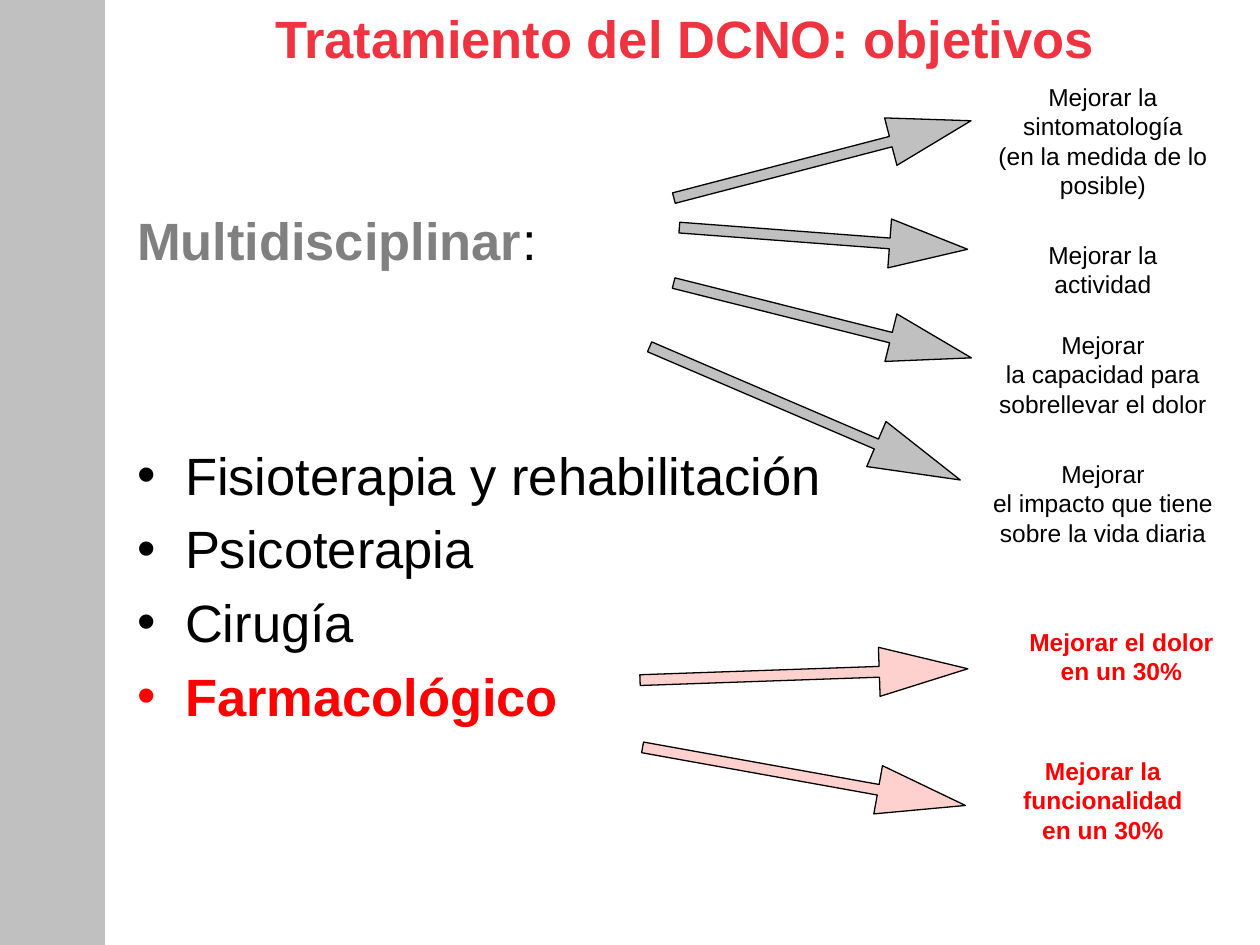
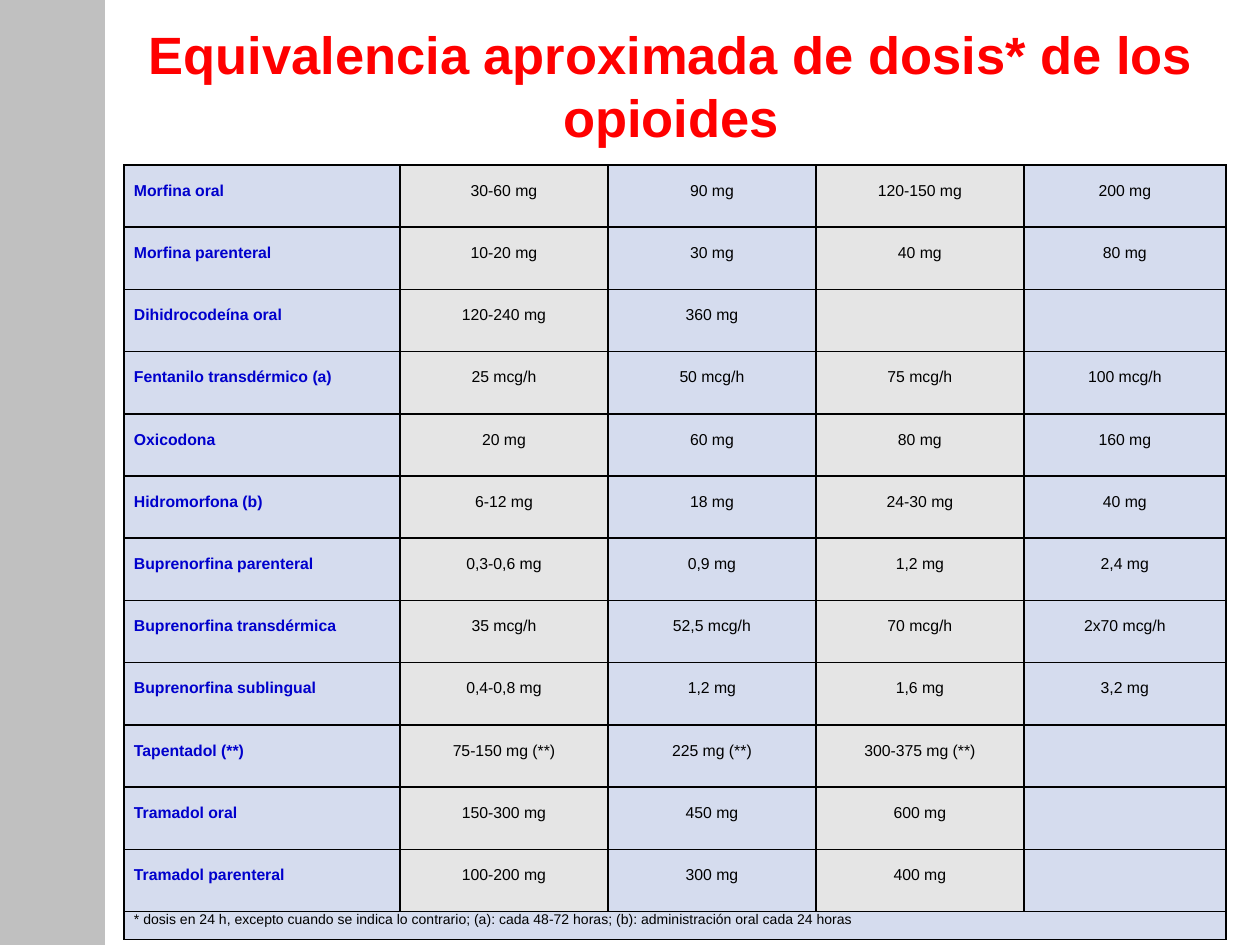
from dataclasses import dataclass

from lxml import etree
from pptx import Presentation
from pptx import util as u
from pptx.dml.color import RGBColor
from pptx.enum import shapes, text
from pptx.oxml.ns import qn

PX = u.Inches(1) // 126


def px(length):
    return u.Emu(length * PX)


@dataclass(frozen=True)
class Theme:
    sans: str = "Arial"
    black: str = "000000"
    gray: str = "808080"
    band: str = "C0C0C0"
    accent: str = "EF3340"
    red: str = "FF0000"
    pink: str = "FED1CE"
    row_label: str = "0000CC"
    cell_blue: str = "D5DCEE"
    heading_size: int = 30
    outcome_size: int = 14
    cell_size: int = 9
    note_size: int = 8


class SlideBuilder:
    def __init__(self, deck, theme):
        self.deck = deck
        self.theme = theme
        self.page = None

    def new_page(self, title, at, color):
        self.page = self.deck.slides.add_slide(self.deck.slide_layouts[5])
        self.shape(shapes.MSO_SHAPE.RECTANGLE, (0, 0, 104, 945),
                   self.theme.band, self.theme.band)
        box = self.page.shapes.title
        box.left, box.top, box.width, box.height = map(px, at)
        self.frame(box)
        para = box.text_frame.paragraphs[0]
        para.alignment = text.PP_ALIGN.CENTER
        self.span(para, title, self.theme.heading_size, color, bold=True)

    def shape(self, kind, at, fill, line):
        shape = self.page.shapes.add_shape(kind, *map(px, at))
        shape.shadow.inherit = False
        shape.fill.solid()
        shape.fill.fore_color.rgb = RGBColor.from_string(fill)
        shape.line.color.rgb = RGBColor.from_string(line)
        shape.line.width = u.Pt(0.75)
        return shape

    def arrow(self, left, top, length, angle, fill):
        """Draw a thin arrow whose head is a fixed share of its length."""
        height = 49
        arrow = self.shape(shapes.MSO_SHAPE.RIGHT_ARROW,
                           (left, top, length, height), fill, self.theme.black)
        arrow.adjustments[0] = 0.22
        arrow.adjustments[1] = 0.27 * length / height
        arrow.rotation = angle

    def frame(self, box, side=13):
        frame = box.text_frame
        frame.word_wrap = True
        frame.auto_size = text.MSO_AUTO_SIZE.NONE
        frame.vertical_anchor = text.MSO_ANCHOR.TOP
        frame.margin_left = frame.margin_right = px(side)
        frame.margin_top = frame.margin_bottom = px(6)

    def text_box(self, at, side=13):
        box = self.page.shapes.add_textbox(*map(px, at))
        self.frame(box, side)
        return box

    def span(self, para, words, size, color, bold=False):
        span = para.add_run()
        span.text = words
        span.font.name = self.theme.sans
        span.font.size = u.Pt(size)
        span.font.bold = bold
        span.font.color.rgb = RGBColor.from_string(color)

    def paragraphs(self, box, count):
        frame = box.text_frame
        return [frame.paragraphs[0]] + [frame.add_paragraph() for _ in range(count - 1)]

    def outcome(self, at, lines, color, bold=False):
        box = self.text_box(at, side=16)
        for para, line in zip(self.paragraphs(box, len(lines)), lines):
            para.alignment = text.PP_ALIGN.CENTER
            self.span(para, line, self.theme.outcome_size, color, bold)

    def bullets(self, at, items):
        """List (words, color, bold) items with hanging bullets."""
        box = self.text_box(at)
        for i, (para, item) in enumerate(zip(self.paragraphs(box, len(items)), items)):
            words, color, bold = item
            props = para._p.get_or_add_pPr()
            props.set("marL", str(px(48)))
            props.set("indent", str(-px(48)))
            etree.SubElement(props, qn("a:buFont"), typeface=self.theme.sans)
            etree.SubElement(props, qn("a:buChar"), char="•")
            if i:
                para.space_before = u.Pt(6)
            self.span(para, words, self.theme.heading_size, color, bold)

    def cell(self, cell, words, fill, size, color, align, top=0, bold=False, alpha=None):
        """Fill and border one cell; alpha is the fill's opacity in percent."""
        cell.margin_left = cell.margin_right = px(10)
        cell.margin_top, cell.margin_bottom = px(top), 0
        props = cell._tc.get_or_add_tcPr()
        for side in ("a:lnL", "a:lnR", "a:lnT", "a:lnB"):
            line = etree.SubElement(props, qn(side), w=str(u.Pt(1)))
            solid = etree.SubElement(line, qn("a:solidFill"))
            etree.SubElement(solid, qn("a:srgbClr"), val=self.theme.black)
        cell.fill.solid()
        cell.fill.fore_color.rgb = RGBColor.from_string(fill)
        if alpha:
            tint = props.find(qn("a:solidFill")).find(qn("a:srgbClr"))
            etree.SubElement(tint, qn("a:alpha"), val=str(alpha * 1000))
        if words:
            para = cell.text_frame.paragraphs[0]
            para.alignment = align
            self.span(para, words, size, color, bold)

    def dose_table(self, at, widths, note_height, rows, note):
        t = self.theme
        left, top, height = at
        grid = self.page.shapes.add_table(
            len(rows) + 1, len(widths), px(left), px(top),
            px(sum(widths)), px(height + note_height)).table
        grid.first_row = grid.horz_banding = False
        for column, width in zip(grid.columns, widths):
            column.width = px(width)
        for r, row in enumerate(rows):
            grid.rows[r].height = px(height) // len(rows)
            for c, words in enumerate(row):
                label, tinted = c == 0, c % 2 == 1
                self.cell(grid.cell(r, c), words,
                          t.black if tinted else t.cell_blue, t.cell_size,
                          t.row_label if label else t.black,
                          text.PP_ALIGN.JUSTIFY if label else text.PP_ALIGN.CENTER,
                          top=17, bold=label, alpha=10 if tinted else None)
        last = len(rows)
        grid.rows[last].height = px(note_height)
        grid.cell(last, 0).merge(grid.cell(last, len(widths) - 1))
        for c in range(len(widths)):
            self.cell(grid.cell(last, c), "" if c else note, t.cell_blue,
                      t.note_size, t.black, text.PP_ALIGN.LEFT)


def goals_page(b):
    t = b.theme
    b.new_page("Tratamiento del DCNO: objetivos", (118, 0, 1134, 76), t.accent)
    para = b.text_box((124, 202, 500, 76)).text_frame.paragraphs[0]
    b.span(para, "Multidisciplinar", t.heading_size, t.gray, bold=True)
    b.span(para, ":", t.heading_size, t.black)
    b.bullets((124, 437, 800, 310), [
        ("Fisioterapia y rehabilitación", t.black, False),
        ("Psicoterapia", t.black, False),
        ("Cirugía", t.black, False),
        ("Farmacológico", t.red, True),
    ])
    for top, height, lines in (
        (76, 130, ("Mejorar la", "sintomatología", "(en la medida de lo posible)")),
        (234, 72, ("Mejorar la", "actividad")),
        (324, 101, ("Mejorar", "la capacidad para sobrellevar el dolor")),
        (453, 101, ("Mejorar", "el impacto que tiene sobre la vida diaria")),
    ):
        b.outcome((946, top, 314, height), lines, t.black)
    b.outcome((983, 621, 277, 101), ("Mejorar el dolor", "en un 30%"), t.red, bold=True)
    b.outcome((946, 750, 314, 101), ("Mejorar la", "funcionalidad", "en un 30%"),
              t.red, bold=True)
    for left, top, length, angle, fill in (
        (636, 389, 338, 23.2, t.band),
        (669, 296, 307, 14.1, t.band),
        (679, 214, 289, 4.3, t.band),
        (669, 135, 307, 345.4, t.band),
        (640, 650, 328, 358, t.pink),
        (640, 752, 328, 10.2, t.pink),
    ):
        b.arrow(left, top, length, angle, fill)


def doses_page(b):
    b.new_page("Equivalencia aproximada de dosis* de los opioides",
               (104, 16, 1134, 169), b.theme.red)
    b.dose_table((124, 165, 747), (276, 208, 208, 208, 202), 28, (
        ("Morfina oral", "30-60 mg", "90 mg", "120-150 mg", "200 mg"),
        ("Morfina parenteral", "10-20 mg", "30 mg", "40 mg", "80 mg"),
        ("Dihidrocodeína oral", "120-240 mg", "360 mg", "", ""),
        ("Fentanilo transdérmico (a)", "25 mcg/h", "50 mcg/h", "75 mcg/h", "100 mcg/h"),
        ("Oxicodona", "20 mg", "60 mg", "80 mg", "160 mg"),
        ("Hidromorfona (b)", "6-12 mg", "18 mg", "24-30 mg", "40 mg"),
        ("Buprenorfina parenteral", "0,3-0,6 mg", "0,9 mg", "1,2 mg", "2,4 mg"),
        ("Buprenorfina transdérmica", "35 mcg/h", "52,5 mcg/h", "70 mcg/h", "2x70 mcg/h"),
        ("Buprenorfina sublingual", "0,4-0,8 mg", "1,2 mg", "1,6 mg", "3,2 mg"),
        ("Tapentadol (**)", "75-150 mg (**)", "225 mg (**)", "300-375 mg (**)", ""),
        ("Tramadol oral", "150-300 mg", "450 mg", "600 mg", ""),
        ("Tramadol parenteral", "100-200 mg", "300 mg", "400 mg", ""),
    ), "* dosis en 24 h, excepto cuando se indica lo contrario; "
       "(a): cada 48-72 horas; (b): administración oral cada 24 horas")


def main():
    deck = Presentation()
    deck.slide_width, deck.slide_height = px(1260), px(945)
    builder = SlideBuilder(deck, Theme())
    goals_page(builder)
    doses_page(builder)
    deck.save("out.pptx")


if __name__ == "__main__":
    main()
